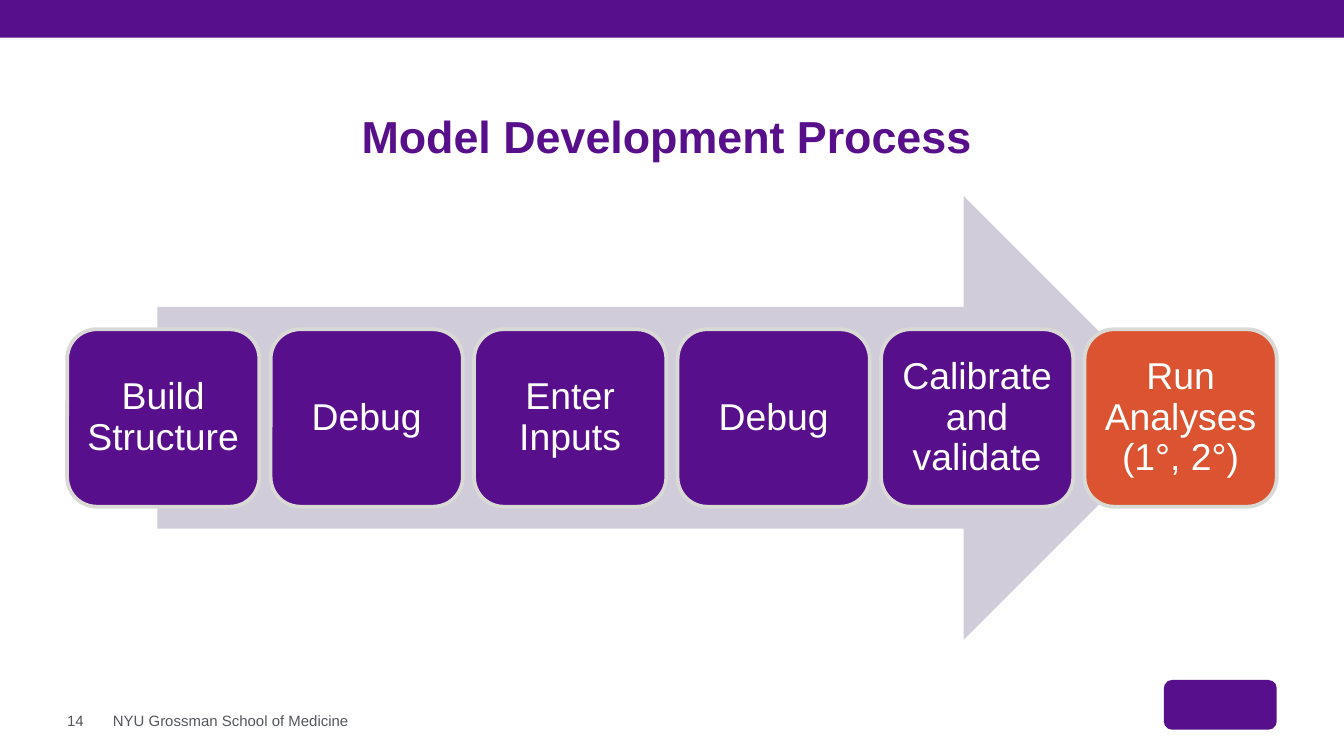
from pptx import Presentation
from pptx.dml.color import RGBColor
from pptx.enum.shapes import MSO_SHAPE
from pptx.enum.text import MSO_ANCHOR, PP_ALIGN
from pptx.util import Inches, Pt

RECTANGLE = MSO_SHAPE.RECTANGLE
ROUNDED = MSO_SHAPE.ROUNDED_RECTANGLE
RIGHT_ARROW = MSO_SHAPE.RIGHT_ARROW
MIDDLE, BOTTOM = MSO_ANCHOR.MIDDLE, MSO_ANCHOR.BOTTOM
LEFT, CENTER = PP_ALIGN.LEFT, PP_ALIGN.CENTER

PURPLE = RGBColor(0x58, 0x0F, 0x8B)
ORANGE = RGBColor(0xDB, 0x53, 0x30)
LAVENDER = RGBColor(0xD1, 0xCC, 0xDA)
LIGHT_GRAY = RGBColor(0xD9, 0xD9, 0xD6)
DARK_GRAY = RGBColor(0x53, 0x56, 0x5A)
WHITE = RGBColor(0xFF, 0xFF, 0xFF)

# Widescreen deck, 16 to 9
deck = Presentation()
deck.slide_width = Inches(10)
deck.slide_height = Inches(10) * 9 // 16
slide = deck.slides.add_slide(deck.slide_layouts[5])


def add_filled(preset, left, top, width, height, color):
    shape = slide.shapes.add_shape(
        preset, Inches(left), Inches(top), Inches(width), Inches(height))
    shape.shadow.inherit = False
    shape.fill.solid()
    shape.fill.fore_color.rgb = color
    shape.line.fill.background()
    return shape


def write(shape, text, size, color, anchor, alignment, inset=0):
    frame = shape.text_frame
    frame.word_wrap = True
    frame.vertical_anchor = anchor
    frame.margin_left = frame.margin_right = Inches(inset)
    frame.margin_top = frame.margin_bottom = Inches(inset)
    para = frame.paragraphs[0]
    para.text = text
    para.alignment = alignment
    para.font.name = "Arial"
    para.font.size = Pt(size)
    para.font.color.rgb = color
    return para


# Top band and plain block in the logo's place
add_filled(RECTANGLE, 0, 0, 10, 0.28, PURPLE)
add_filled(ROUNDED, 8.66, 5.06, 0.84, 0.37, PURPLE)

# Title
title = slide.shapes.title
title.left, title.top = Inches(2.69), Inches(0.87)
title.width, title.height = Inches(4.6), Inches(0.34)
title_para = write(title, "Model Development Process", 24, PURPLE, BOTTOM, LEFT)
title_para.font.bold = True
title_para.line_spacing = 0.85

# Footer and page number
for text, left, width in [("NYU Grossman School of Medicine", 0.84, 3.7),
                          ("14", 0.5, 0.28)]:
    box = slide.shapes.add_textbox(
        Inches(left), Inches(5.3), Inches(width), Inches(0.13))
    write(box, text, 8, DARK_GRAY, MIDDLE, LEFT)

# Process arrow
add_filled(RIGHT_ARROW, 1.17, 1.46, 7.65, 3.3, LAVENDER)

# Steps, spread evenly between the side margins
steps = [
    ("Build Structure", PURPLE),
    ("Debug", PURPLE),
    ("Enter Inputs", PURPLE),
    ("Debug", PURPLE),
    ("Calibrate and validate", PURPLE),
    ("Run Analyses (1°, 2°)", ORANGE),
]
margin, step_width = 0.5, 1.43
pitch = (10 - 2 * margin - step_width) / (len(steps) - 1)
for index, (label, color) in enumerate(steps):
    step = add_filled(ROUNDED, margin + index * pitch, 2.45, step_width, 1.32, color)
    step.line.color.rgb = LIGHT_GRAY
    step.line.width = Pt(2)
    step_para = write(step, label, 20, WHITE, MIDDLE, CENTER, inset=0.08)
    step_para.line_spacing = 0.9

deck.save("out.pptx")
